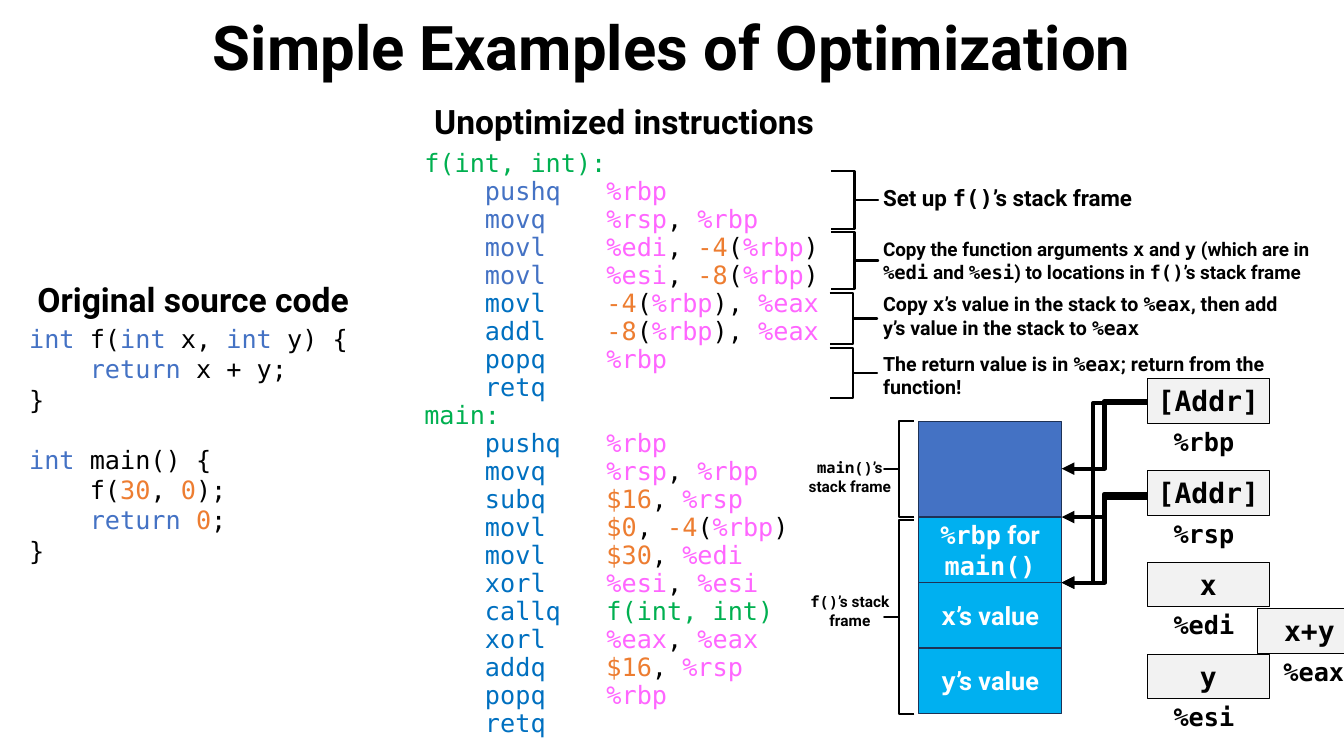
import pptx
import pptx.util
import pptx.dml.color
import pptx.enum.shapes
import pptx.enum.text
import pptx.oxml
import pptx.oxml.ns
from lxml import etree

Inches = pptx.util.Inches
Pt = pptx.util.Pt
SHAPES = pptx.enum.shapes.MSO_SHAPE
ALIGN = pptx.enum.text.PP_ALIGN
ANCHOR = pptx.enum.text.MSO_ANCHOR
COLORS = {
    "black": "000000", "white": "FFFFFF", "blue": "4472C4", "azure": "0070C0",
    "green": "00B050", "orange": "ED7D31", "pink": "FF66FF", "sky": "00B0F0",
    "navy": "1E3256", "gray": "F2F2F2",
}
# The first letter of each "|" segment picks its font and colour
MONO = "DejaVu Sans Mono"
STYLES = {
    "r": ("Roboto", None), "n": ("Noto Sans Mono", None), "m": (MONO, None),
    "b": (MONO, "blue"), "a": (MONO, "azure"), "g": (MONO, "green"),
    "o": (MONO, "orange"), "p": (MONO, "pink"),
}


def write_text(shape, lines, size, color="black", bold=True, align=ALIGN.CENTER,
               spacing=None, anchor=ANCHOR.TOP):
    frame = shape.text_frame
    frame.word_wrap = True
    frame.vertical_anchor = anchor
    for number, line in enumerate(lines):
        paragraph = frame.add_paragraph() if number else frame.paragraphs[0]
        paragraph.alignment = align
        if spacing:
            paragraph.line_spacing = spacing
        for segment in line.split("|"):
            font_name, own_color = STYLES[segment[0]]
            run = paragraph.add_run()
            run.text = segment[1:]
            for name, value in {"name": font_name, "size": Pt(size), "bold": bold}.items():
                setattr(run.font, name, value)
            run.font.color.rgb = pptx.dml.color.RGBColor.from_string(COLORS[own_color or color])
    return frame


def add_outlined(kind, place, line, width, fill=None):
    shape = slide.shapes.add_shape(kind, *map(Inches, place))
    shape.shadow.inherit = False
    shape.line.color.rgb = pptx.dml.color.RGBColor.from_string(COLORS[line])
    shape.line.width = Pt(width)
    if fill:
        shape.fill.solid()
        shape.fill.fore_color.rgb = pptx.dml.color.RGBColor.from_string(COLORS[fill])
    else:
        shape.fill.background()
    return shape


presentation = pptx.Presentation()
presentation.slide_width = Inches(13.33)
presentation.slide_height = Inches(7.5)
slide = presentation.slides.add_slide(presentation.slide_layouts[5])

# Title
title = slide.shapes.title
for name, value in {"left": 0.92, "top": -0.01, "width": 11.5, "height": 1.03}.items():
    setattr(title, name, Inches(value))
title.text_frame.auto_size = pptx.enum.text.MSO_AUTO_SIZE.NONE
write_text(title, ["rSimple Examples of Optimization"], 44, spacing=0.9, anchor=ANCHOR.MIDDLE)

# Column headings
for place, heading in [
    ((0.17, 2.72, 3.49, 0.5), "rOriginal source code"),
    ((3.64, 0.95, 5.1, 0.5), "rUnoptimized instructions"),
]:
    write_text(slide.shapes.add_textbox(*map(Inches, place)), [heading], 24)

# Source code
source_lines = [
    "bint|m f(|bint|m x, |bint|m y) {",
    "m    |breturn|m x + y;",
    "m}",
    "bint|m main() {",
    "m    f(|o30|m, |o0|m);",
    "m    |breturn |o0|m;",
    "m}",
]
source_box = slide.shapes.add_textbox(*map(Inches, (0.19, 3.16, 3.49, 2.52)))
source_frame = write_text(source_box, source_lines, 18, bold=False, align=ALIGN.LEFT)
source_frame.paragraphs[3].space_before = Pt(21.5)

# Assembly code
assembly_lines = [
    "gf(int, int):",
    "b    pushq   |p%rbp",
    "b    movq    |p%rsp|m, |p%rbp",
    "b    movl    |p%edi|m, |o-4|m(|p%rbp|m)",
    "b    movl    |p%esi|m, |o-8|m(|p%rbp|m)",
    "a    movl    |o-4|m(|p%rbp|m), |p%eax",
    "a    addl    |o-8|m(|p%rbp|m), |p%eax",
    "a    popq    |p%rbp",
    "a    retq",
    "gmain:",
    "a    pushq   |p%rbp",
    "a    movq    |p%rsp|m, |p%rbp",
    "a    subq    |o$16|m, |p%rsp",
    "a    movl    |o$0|m, |o-4|m(|p%rbp|m)",
    "a    movl    |o$30|m, |p%edi",
    "a    xorl    |p%esi|m, |p%esi",
    "a    callq   |gf(int, int)",
    "a    xorl    |p%eax|m, |p%eax",
    "a    addq    |o$16|m, |p%rsp",
    "a    popq    |p%rbp",
    "a    retq",
]
assembly_box = slide.shapes.add_textbox(*map(Inches, (4.11, 1.43, 4.18, 5.99)))
write_text(assembly_box, assembly_lines, 18, bold=False, align=ALIGN.LEFT, spacing=Pt(20))

# Braces with explanations of the instructions
for brace_place, note_place, size, note in [
    ((8.24, 1.7, 0.47, 0.57), (8.66, 1.78, 2.79, 0.37), 16, "rSet up |mf()|r’s stack frame"),
    ((8.24, 2.3, 0.47, 0.57), (8.66, 2.31, 4.9, 0.56), 13.5,
     "rCopy the function arguments |mx|r and |my|r (which are in |m%edi|r and |m%esi"
     "|r) to locations in |mf()|r’s stack frame"),
    ((8.23, 2.91, 0.47, 0.5), (8.66, 2.85, 4.18, 0.57), 14,
     "rCopy |mx|r’s value in the stack to |m%eax|r, then add y’s value in the stack to |m%eax"),
    ((8.23, 3.45, 0.47, 0.5), (8.66, 3.44, 4.18, 0.57), 14,
     "rThe return value is in |m%eax|r; return from the function!"),
]:
    brace = add_outlined(SHAPES.RIGHT_BRACE, brace_place, "black", 1.5)
    brace.adjustments[0] = 0
    note_box = slide.shapes.add_textbox(*map(Inches, note_place))
    write_text(note_box, [note], size, align=ALIGN.LEFT)

# Stack cells
for top, height, fill, label in [
    (4.18, 0.95, "blue", None),
    (5.13, 0.65, "sky", "m%rbp|r for |mmain()"),
    (5.78, 0.65, "sky", "mx|r’s value"),
    (6.43, 0.65, "sky", "my|r’s value"),
]:
    cell = add_outlined(SHAPES.RECTANGLE, (9.11, top, 1.42, height), "navy", 1, fill)
    if label:
        write_text(cell, [label], 18, "white", anchor=ANCHOR.MIDDLE)

# Stack frame braces
for top, height, label_top, label in [
    (4.18, 0.95, 4.5, "nmain()|r’s stack frame"),
    (5.16, 1.92, 5.83, "nf()|r’s stack frame"),
]:
    brace = add_outlined(SHAPES.RIGHT_BRACE, (8.77, top, 0.3, height), "black", 1.5)
    brace.adjustments[0] = 0
    brace.rotation = 180
    frame_label = slide.shapes.add_textbox(*map(Inches, (7.91, label_top, 1.04, 0.47)))
    write_text(frame_label, [label], 11)

# Pointers from registers into the stack
for start_y, end_y, bend in [
    (3.98, 4.65, 50000), (4.9, 5.13, 50000), (4, 5.78, 63100), (4.94, 5.78, 50000),
]:
    pointer = slide.shapes.add_connector(
        pptx.enum.shapes.MSO_CONNECTOR.ELBOW, *map(Inches, (11.38, start_y, 10.53, end_y)))
    pointer.line.color.rgb = pptx.dml.color.RGBColor.from_string(COLORS["black"])
    pointer.line.width = Pt(3)
    etree.SubElement(pointer.line._get_or_add_ln(), pptx.oxml.ns.qn("a:tailEnd"), type="triangle")
    properties = pointer._element.spPr
    etree.SubElement(properties, pptx.oxml.ns.qn("a:effectLst"))
    guides = properties.find(".//" + pptx.oxml.ns.qn("a:avLst"))
    etree.SubElement(guides, pptx.oxml.ns.qn("a:gd"), name="adj1", fmla=f"val {bend}")

# Registers
registers = [("m[Addr]", "m%rbp"), ("m[Addr]", "m%rsp"), ("mx", "m%edi"), ("my", "m%esi")]
register_places = [(11.38, 3.76 + 0.91 * row, *register, ALIGN.CENTER)
                   for row, register in enumerate(registers)]
register_places.append((12.47, 6.04, "m x+y", "m%eax", ALIGN.LEFT))
for left, top, content, register_name, align in register_places:
    register_box = add_outlined(SHAPES.RECTANGLE, (left, top, 1.21, 0.44), "black", 0.75, "gray")
    write_text(register_box, [content], 20, align=align)
    name_box = slide.shapes.add_textbox(*map(Inches, (left, top + 0.42, 1.12, 0.4)))
    write_text(name_box, [register_name], 18)

presentation.save("out.pptx")
